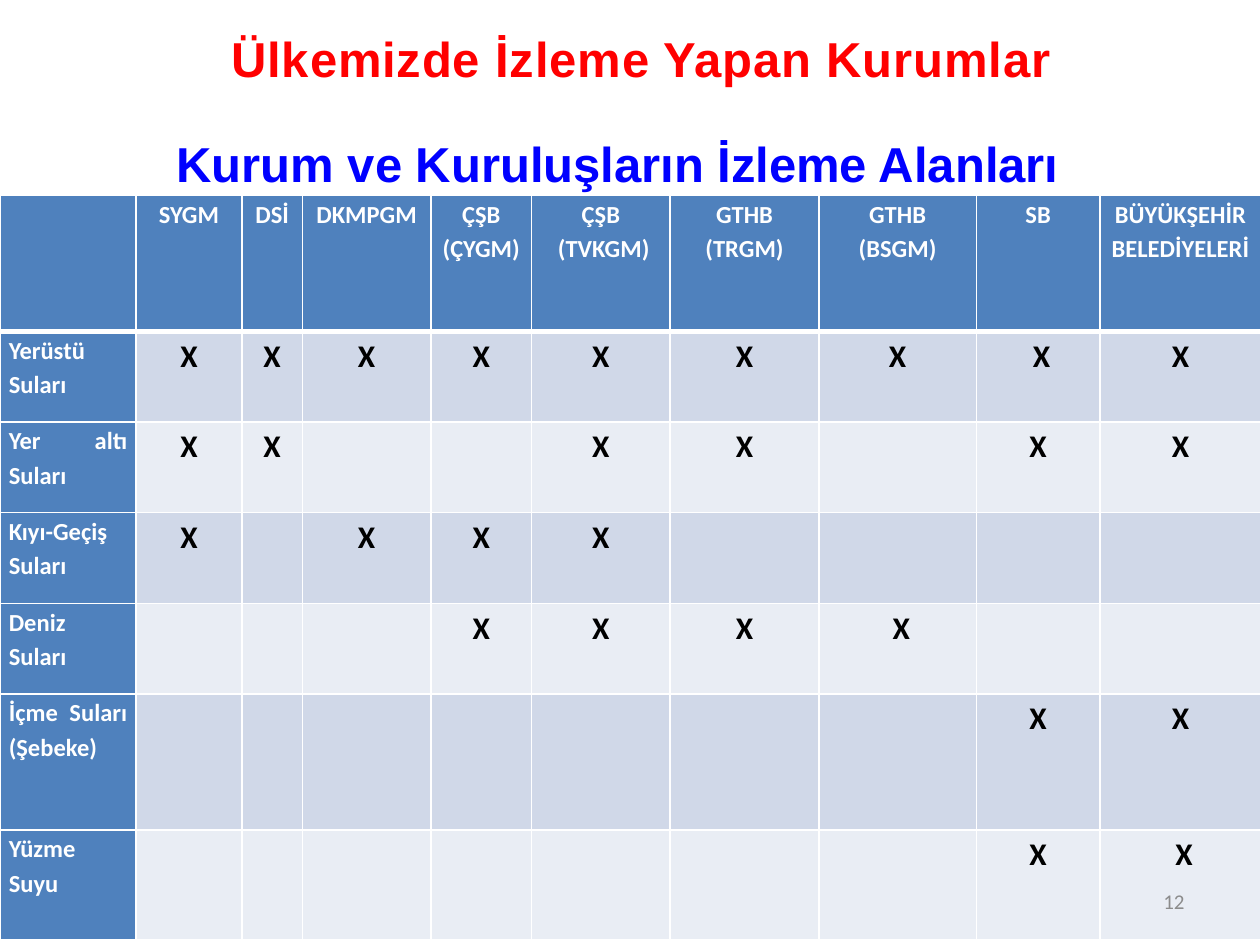
from lxml.etree import SubElement
from pptx import Presentation
from pptx.dml.color import RGBColor
from pptx.enum.text import MSO_ANCHOR as Anchor, PP_ALIGN as Align
from pptx.oxml.ns import qn
from pptx.util import Inches, Pt

WHITE, BLACK, RED, BLUE, GRAY = "FFFFFF", "000000", "FF0000", "0000FF", "8C8C8C"
HEADER, BANDS = "4F81BD", ("D0D8E8", "E9EDF4")

INSTITUTIONS = ["", "SYGM", "DSİ", "DKMPGM", "ÇŞB (ÇYGM)", "ÇŞB\n (TVKGM)",
                "GTHB (TRGM)", "GTHB\n(BSGM)", "SB", "BÜYÜKŞEHİR BELEDİYELERİ"]
# One letter per institution: X is a mark, x a mark after a hard space
WATERS = {
    "Yerüstü Suları": "XXXXXXXxX",
    "Yer altı Suları": "XX--XX-XX",
    "Kıyı-Geçiş Suları": "X-XXX----",
    "Deniz Suları": "---XXXx--",
    "İçme Suları (Şebeke)": "-------XX",
    "Yüzme Suyu": "-------Xx",
}
MARKS = {"X": "X", "x": " X", "-": ""}
COLUMN_WIDTHS = [1.08, 0.84, 0.48, 1.02, 0.8, 1.1, 1.18, 1.25, 0.98, 1.28]
ROW_HEIGHTS = [1.08, 0.72, 0.72, 0.72, 0.72, 1.08, 0.87]


def color(value):
    return RGBColor.from_string(value)


class SlideBuilder:
    def __init__(self, page):
        self.page = page

    def format_text(self, frame, font, size, ink, align, bold=True, line=None, tracking=None):
        for para in frame.paragraphs:
            para.alignment = align
            if line:
                para.line_spacing = line
            for span in para.runs:
                span.font.name = font
                span.font.size = Pt(size)
                span.font.bold = bold
                span.font.color.rgb = color(ink)
                if tracking:
                    span.font._element.set("spc", str(int(tracking * 100)))

    def text(self, words, place, size, ink, font="Arial", align=Align.CENTER,
             anchor=Anchor.MIDDLE, wrap=True, **style):
        box = self.page.shapes.add_textbox(*map(Inches, place))
        frame = box.text_frame
        frame.word_wrap = wrap
        frame.vertical_anchor = anchor
        frame.text = words
        self.format_text(frame, font, size, ink, align, **style)
        return box

    def borders(self, cell, top, bottom):
        properties = cell._tc.get_or_add_tcPr()
        for side, width in (("L", 1), ("R", 1), ("T", top), ("B", bottom)):
            edge = SubElement(properties, qn(f"a:ln{side}"), w=str(Pt(width)))
            fill = SubElement(edge, qn("a:solidFill"))
            SubElement(fill, qn("a:srgbClr"), val=WHITE)

    def cell(self, cell, words, fill, size, ink, align, top=1, bottom=1):
        self.borders(cell, top, bottom)
        cell.fill.solid()
        cell.fill.fore_color.rgb = color(fill)
        cell.margin_left = cell.margin_right = Inches(0.07)
        cell.margin_top = cell.margin_bottom = 0
        if words:
            cell.text_frame.text = words
            self.format_text(cell.text_frame, "Calibri", size, ink, align, line=1.15)

    def monitoring_table(self, left, top):
        table = self.page.shapes.add_table(
            len(ROW_HEIGHTS), len(COLUMN_WIDTHS), Inches(left), Inches(top),
            Inches(sum(COLUMN_WIDTHS)), Inches(sum(ROW_HEIGHTS))).table
        for column, width in zip(table.columns, COLUMN_WIDTHS):
            column.width = Inches(width)
        for row, height in zip(table.rows, ROW_HEIGHTS):
            row.height = Inches(height)

        for index, name in enumerate(INSTITUTIONS):
            self.cell(table.cell(0, index), name, HEADER, 14, WHITE, Align.CENTER, bottom=3)
        for row, (water, pattern) in enumerate(WATERS.items(), 1):
            upper = 3 if row == 1 else 1
            self.cell(table.cell(row, 0), water, HEADER, 14, WHITE, Align.JUSTIFY, top=upper)
            for index, letter in enumerate(pattern, 1):
                self.cell(table.cell(row, index), MARKS[letter], BANDS[(row - 1) % 2],
                          18, BLACK, Align.CENTER, top=upper)


def main():
    deck = Presentation()
    deck.slide_width, deck.slide_height = Inches(10), Inches(7.5)
    builder = SlideBuilder(deck.slides.add_slide(deck.slide_layouts[6]))

    builder.text("Ülkemizde İzleme Yapan Kurumlar", (0.59, 0, 9, 0.92), 28, RED, tracking=0.5)
    builder.monitoring_table(0, 1.55)
    builder.text("12", (7.17, 6.95, 2.33, 0.4), 12, GRAY, font="Calibri",
                 align=Align.RIGHT, bold=False)
    subtitle = builder.text("Kurum ve Kuruluşların İzleme Alanları ", (1.26, 0.99, 7.39, 0.88),
                            28, BLUE, anchor=Anchor.TOP, wrap=False)
    subtitle.text_frame.margin_top = Inches(0.07)

    deck.save("out.pptx")


if __name__ == "__main__":
    main()
